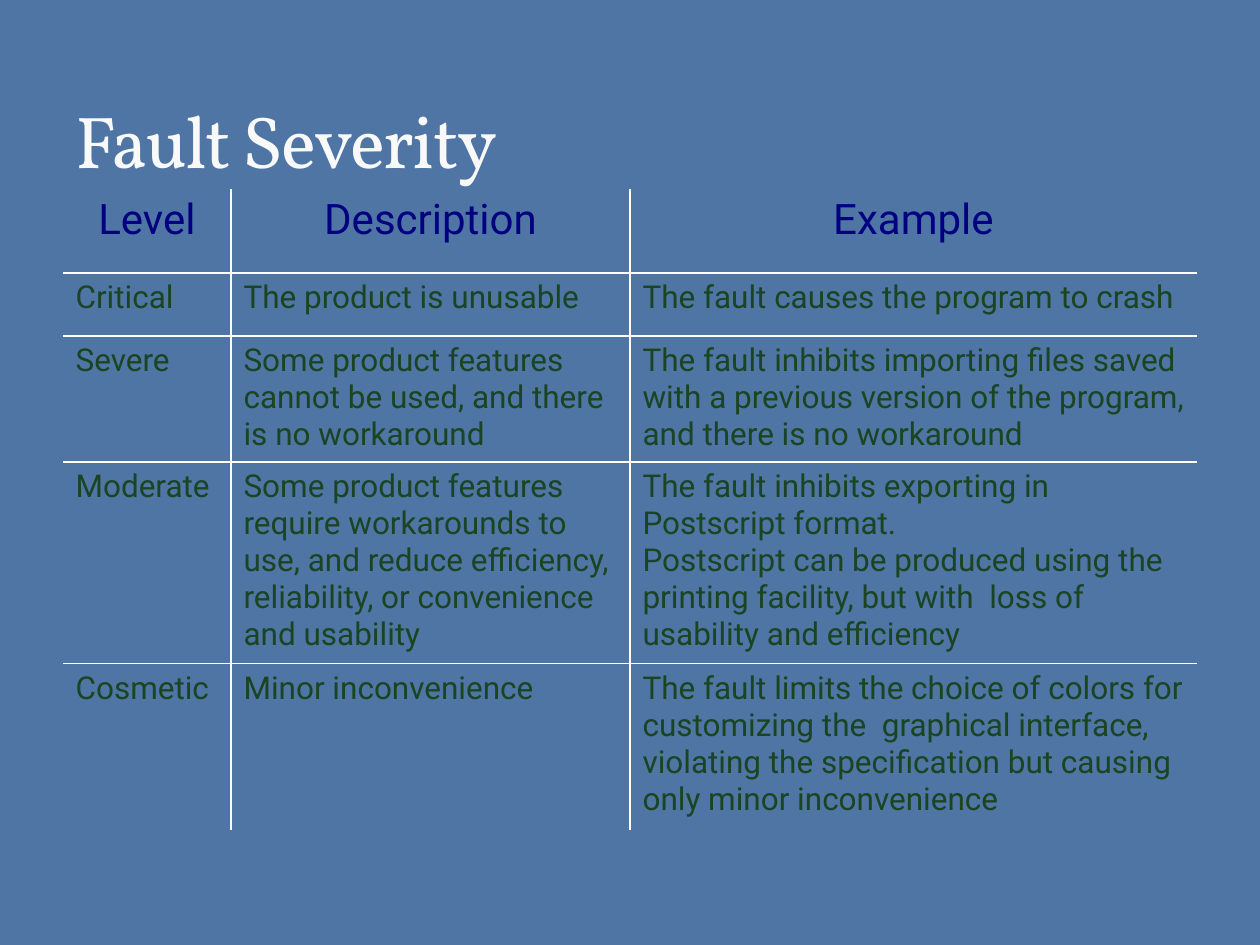
from lxml.etree import SubElement
from pptx import Presentation
from pptx.dml.color import RGBColor
from pptx.enum.text import MSO_ANCHOR as Anchor, PP_ALIGN as Align
from pptx.oxml.ns import qn
from pptx.util import Emu, Pt

EMU_PER_PX = 914400 / 126
COLORS = {
    "background": "4E75A3",
    "title": "F9F9F9",
    "heading": "000080",
    "body": "1A4422",
    "rule": "FFFFFF",
}
PLAIN_TABLE_STYLE = "{2D5ABB26-0587-4C30-8999-92F81FD0307C}"
COLUMN_WIDTHS = [168, 399, 567]
ROW_HEIGHTS = [84, 63, 126, 199, 166]
ROWS = [
    ("Level", "Description", "Example"),
    ("Critical", "The product is unusable", "The fault causes the program to crash"),
    ("Severe",
     "Some product features cannot be used, and there is no workaround",
     "The fault inhibits importing files saved with a previous version of the program, "
     "and there is no workaround"),
    ("Moderate",
     "Some product features require workarounds to use, and reduce efficiency, "
     "reliability, or convenience and usability",
     "The fault inhibits exporting in Postscript format.\v"
     "Postscript can be produced using the printing facility, but with  loss of "
     "usability and efficiency"),
    ("Cosmetic", "Minor inconvenience",
     "The fault limits the choice of colors for customizing the  graphical interface, "
     "violating the specification but causing only minor inconvenience"),
]


def px(length):
    return Emu(round(length * EMU_PER_PX))


def rgb(name):
    return RGBColor.from_string(COLORS[name])


def write_text(frame, text, *, font, size, color, align=Align.LEFT, spacing=None):
    """Fill a text frame with one paragraph; spacing is in hundredths of a point."""
    frame.word_wrap = True
    para = frame.paragraphs[0]
    para.text = text
    para.alignment = align
    for span in para.runs:
        span.font.name = font
        span.font.size = Pt(size)
        span.font.bold = False
        span.font.color.rgb = rgb(color)
        if spacing is not None:
            span.font._element.set("spc", str(spacing))


def add_title(page, text):
    box = page.shapes.add_textbox(px(63), px(38), px(1134), px(151))
    box.text_frame.vertical_anchor = Anchor.BOTTOM
    write_text(box.text_frame, text, font="Vollkorn", size=42, color="title", spacing=-100)


def add_borders(cell, sides):
    properties = cell._tc.get_or_add_tcPr()
    for side in sides:
        line = SubElement(properties, qn(f"a:ln{side}"), w=str(Pt(1)))
        fill = SubElement(line, qn("a:solidFill"))
        SubElement(fill, qn("a:srgbClr"), val=COLORS["rule"])


def inner_sides(row, column):
    """Sides of a cell that do not lie on the table's outer edge, in schema order."""
    inside = {
        "L": column > 0,
        "R": column < len(COLUMN_WIDTHS) - 1,
        "T": row > 0,
        "B": row < len(ROW_HEIGHTS) - 1,
    }
    return [side for side, shown in inside.items() if shown]


def add_severity_table(page):
    frame = page.shapes.add_table(
        len(ROWS), len(COLUMN_WIDTHS), px(63), px(189),
        px(sum(COLUMN_WIDTHS)), px(sum(ROW_HEIGHTS)))
    table = frame.table
    table.first_row = table.horz_banding = False
    table._tbl.tblPr.find(qn("a:tableStyleId")).text = PLAIN_TABLE_STYLE
    for column, width in zip(table.columns, COLUMN_WIDTHS):
        column.width = px(width)
    for row, height in zip(table.rows, ROW_HEIGHTS):
        row.height = px(height)

    heading = dict(size=24, color="heading", align=Align.CENTER)
    body = dict(size=18, color="body")
    for r, texts in enumerate(ROWS):
        for c, text in enumerate(texts):
            cell = table.cell(r, c)
            add_borders(cell, inner_sides(r, c))
            cell.fill.background()
            write_text(cell.text_frame, text, font="Roboto", **(body if r else heading))


def main():
    deck = Presentation()
    deck.slide_width, deck.slide_height = px(1260), px(945)
    page = deck.slides.add_slide(deck.slide_layouts[6])
    page.background.fill.solid()
    page.background.fill.fore_color.rgb = rgb("background")
    add_title(page, "Fault Severity")
    add_severity_table(page)
    deck.save("out.pptx")


if __name__ == "__main__":
    main()
